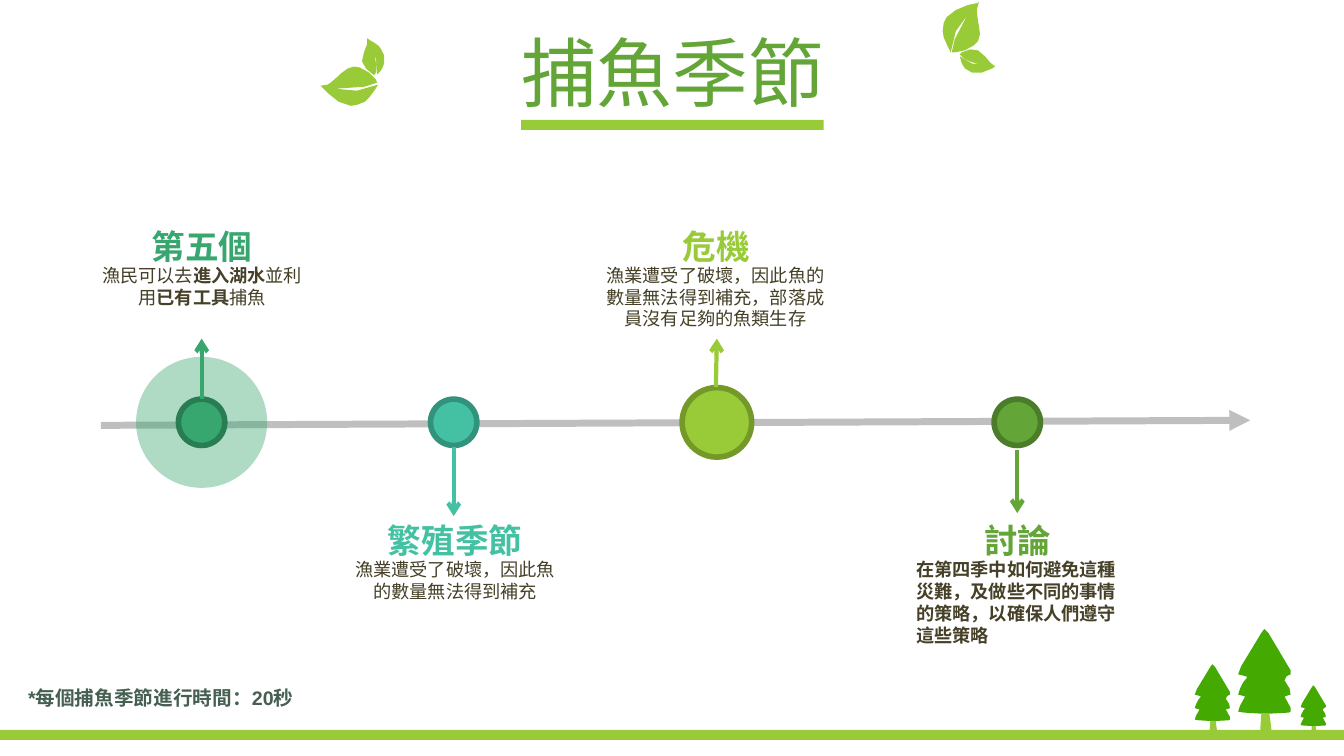
from lxml.etree import SubElement
from pptx import Presentation
from pptx.dml.color import RGBColor
from pptx.enum.shapes import MSO_CONNECTOR as Conn, MSO_SHAPE as Kind
from pptx.enum.text import MSO_ANCHOR as Anchor, MSO_AUTO_SIZE as Fit, PP_ALIGN as Align
from pptx.oxml.ns import qn
from pptx.util import Inches, Pt

LIME, GREEN, JADE, TEAL = "99CB38", "63A537", "37A76F", "44C1A3"
PINE, INK = "44A900", "454027"

prs = Presentation()
prs.slide_width, prs.slide_height = Inches(13.33), Inches(7.5)
slide = prs.slides.add_slide(prs.slide_layouts[6])
shapes = slide.shapes


def paint(shape, fill, edge=None):
    shape.shadow.inherit = False
    shape.fill.solid()
    shape.fill.fore_color.rgb = RGBColor.from_string(fill)
    if edge:
        shape.line.color.rgb = RGBColor.from_string(edge)
        shape.line.width = Pt(4)
    else:
        shape.line.fill.background()


def write(x, y, w, h, runs, size, color, align=Align.CENTER):
    box = shapes.add_textbox(Inches(x), Inches(y), Inches(w), Inches(h))
    frame = box.text_frame
    frame.word_wrap = True
    frame.auto_size = Fit.SHAPE_TO_FIT_TEXT
    para = frame.paragraphs[0]
    para.alignment = align
    for text, bold in runs:
        run = para.add_run()
        run.text = text
        run.font.name = "Arial"
        run.font.size = Pt(size)
        run.font.bold = bold
        run.font.color.rgb = RGBColor.from_string(color)
    return frame


# Outlines in hundredths of an inch: left, top, scale, colour, points
crown = [(23, 84), (6, 83), (0, 81.5), (2, 76), (7, 67), (0, 65), (2, 59), (5, 53),
         (9, 48), (8, 47), (0.5, 45), (3, 37), (23, 4), (26.5, 0.5), (30, 4),
         (52, 41), (52.5, 45), (48, 47), (46, 51), (51, 59), (52.5, 65), (46, 67),
         (52, 78), (52.5, 82), (50, 83), (31, 84)]
trunk = [(23, 84), (31, 84), (33, 99), (32, 103), (27, 106), (22, 104), (22, 99)]
leaves = [
    [(943, 52), (948, 31), (961, 13), (960, 14), (947, 39), (944, 52), (947, 52),
     (957, 50), (966, 45), (970, 41), (972, 34), (971, 26), (970, 21), (969, 12),
     (969, 9), (971, 2), (970, 3), (960, 5), (948, 10), (939, 17), (936, 23),
     (935, 31), (936, 37), (940, 46)],
    [(978, 65), (964, 63), (952, 56), (953, 60), (954, 63), (957, 68), (964, 72),
     (970, 72), (974, 72), (979, 70), (984, 68), (987, 66), (982, 62), (977, 56),
     (970, 50), (962, 49), (954, 52), (952, 54), (955, 57), (958, 59), (962, 61),
     (971, 64)],
    [(375, 84), (354, 90), (332, 88), (333, 88), (362, 86), (374, 82), (373, 79),
     (366, 72), (357, 67), (351, 66), (345, 68), (338, 73), (335, 76), (328, 82),
     (325, 84), (318, 85), (319, 86), (326, 93), (336, 101), (348, 105), (354, 104),
     (362, 101), (366, 97), (372, 89)],
    [(368, 46), (373, 59), (374, 74), (377, 71), (379, 68), (381, 63), (381, 55),
     (378, 49), (376, 46), (372, 43), (367, 40), (364, 38), (364, 44), (361, 52),
     (359, 61), (363, 68), (370, 74), (372, 74), (373, 71), (373, 67), (373, 63),
     (371, 53)],
]
art = [(0, 0, 1, LIME, leaf) for leaf in leaves]
for x, y, k in [(12.28, 6.24, 1), (12.9, 6.8, 0.48), (11.85, 6.59, 0.67)]:
    art += [(x, y, k, PINE, crown), (x, y, k, LIME, trunk)]
for x, y, k, color, pts in art:
    pen = shapes.build_freeform(*pts[0], scale=Inches(0.01) * k)
    pen.add_line_segments(pts[1:], close=True)
    paint(pen.convert_to_shape(Inches(x), Inches(y)), color)

# Title rule and ground
for x, y, w in [(5.17, 1.19, 3), (0, 7.24, 13.33)]:
    bar = shapes.add_shape(Kind.RECTANGLE, Inches(x), Inches(y), Inches(w), Inches(0.1))
    paint(bar, LIME)

# Title
head = write(0.34, 0.37, 12.66, 0.79, [("捕魚季節", False)], 54, GREEN)
head.auto_size = Fit.NONE
head.vertical_anchor = Anchor.MIDDLE
head.paragraphs[0].line_spacing = 0.9

# Time axis and arrows: x1, y1, x2, y2, colour, width, head
arrows = [(1, 4.22, 12.4, 4.17, "BFBFBF", 5, "triangle"),
          (7.1, 3.84, 7.11, 3.36, LIME, 3, "arrow"),
          (2, 3.96, 2, 3.36, JADE, 3, "arrow"),
          (4.5, 4.43, 4.5, 5.12, TEAL, 3, "arrow"),
          (10.09, 4.46, 10.09, 5.09, GREEN, 3, "arrow")]
# Dots: centre x, diameter, fill, edge
dots = [(10.09, 0.46, GREEN, "4A7C29"), (7.11, 0.69, LIME, "739A28"),
        (4.5, 0.46, TEAL, "31937B"), (2, 1.3, JADE, None), (2, 0.46, JADE, "297D53")]

for i, (x1, y1, x2, y2, color, width, tip) in enumerate(arrows):
    line = shapes.add_connector(Conn.STRAIGHT, Inches(x1), Inches(y1), Inches(x2), Inches(y2))
    line.line.color.rgb = RGBColor.from_string(color)
    line.line.width = Pt(width)
    SubElement(line.line._get_or_add_ln(), qn("a:tailEnd"), type=tip)
    SubElement(line._element.spPr, qn("a:effectLst"))
    if i:
        continue
    # Dots lie over the axis and under the arrows
    for x, d, fill, edge in dots:
        dot = shapes.add_shape(Kind.OVAL, Inches(x - d / 2), Inches(4.19 - d / 2),
                               Inches(d), Inches(d))
        paint(dot, fill, edge)
        if not edge:
            tint = dot._element.spPr.find(qn("a:solidFill"))[0]
            SubElement(tint, qn("a:alpha"), val="40000")

# Stages: left, top, name, colour, body left, body width, body height, align, body
stages = [
    (0.9, 2.19, "第五個", JADE, 0.9, 2.21, 0.54, Align.CENTER,
     [("漁民可以去", False), ("進入湖水", True), ("並利用", False),
      ("已有工具", True), ("捕魚", False)]),
    (6, 2.19, "危機", LIME, 5.87, 2.45, 0.76, Align.CENTER,
     [("漁業遭受了破壞，因此魚的數量無法得到補充，部落成員沒有足夠的魚類生存", False)]),
    (3.41, 5.11, "繁殖季節", TEAL, 3.41, 2.21, 0.54, Align.CENTER,
     [("漁業遭受了破壞，因此魚的數量無法得到補充", False)]),
    (8.99, 5.11, "討論", GREEN, 8.99, 2.21, 0.98, Align.LEFT,
     [("在第四季中如何避免這種災難，及做些不同的事情的策略，以確保人們遵守這些策略", True)]),
]
for x, y, name, color, left, w, h, align, body in stages:
    write(x, y, 2.21, 0.5, [(name, True)], 24, color)
    write(left, y + 0.38, w, h, body, 13, INK, align)

# Footnote
write(0.18, 6.76, 5.73, 0.34, [("*每個捕魚季節進行時間：20秒", True)], 14, "455F51", Align.LEFT)

prs.save("out.pptx")
